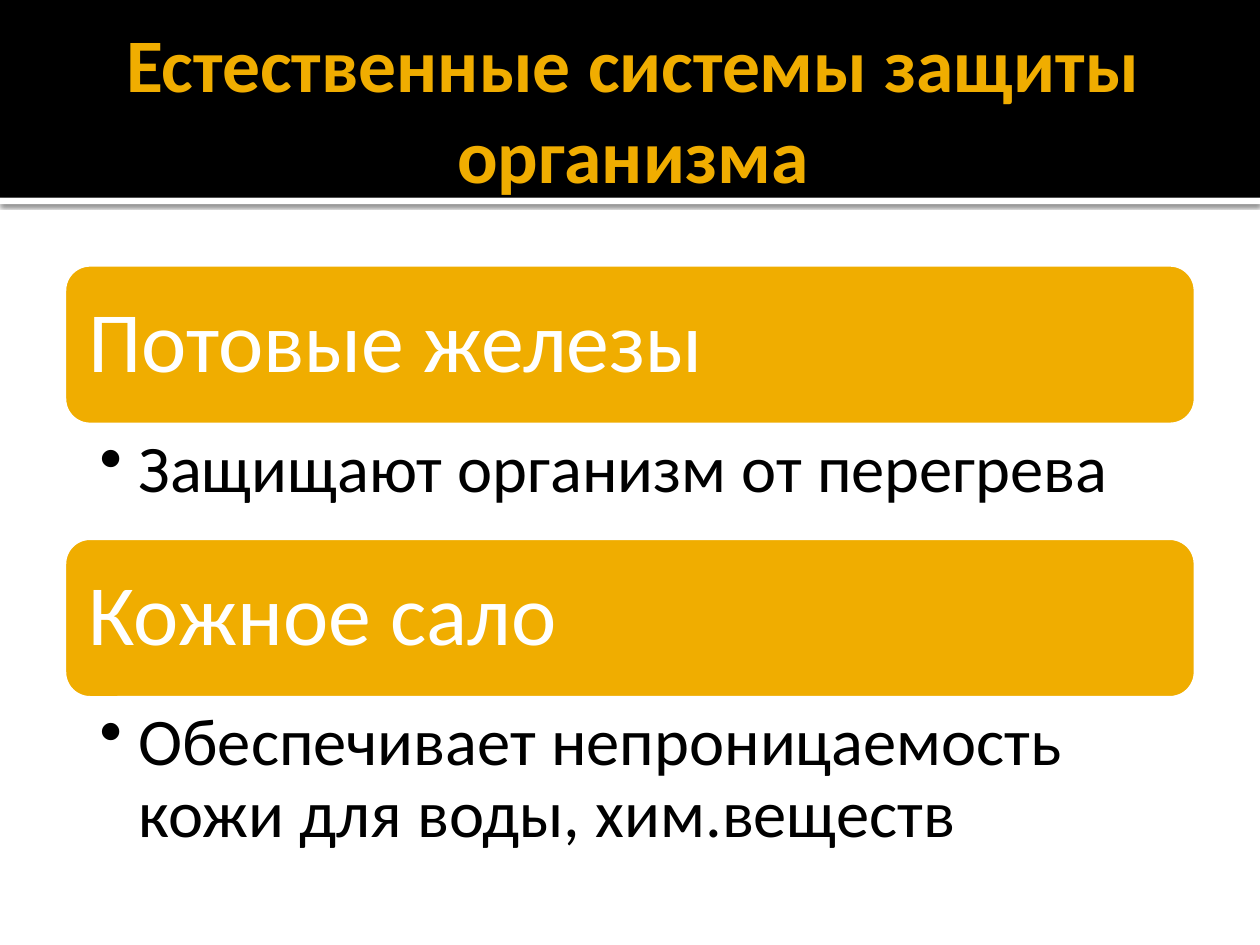
from lxml.etree import SubElement
from pptx import Presentation
from pptx.dml.color import RGBColor
from pptx.enum.shapes import MSO_SHAPE as Form
from pptx.enum.text import MSO_ANCHOR as Anchor, PP_ALIGN as Align
from pptx.oxml.ns import qn
from pptx.util import Inches, Pt

WIDE, HIGH = 10, 7.5


def tint(code):
    return RGBColor.from_string(code)


class Deck:
    font = "Calibri"
    gold, white, black = "F0AD00", "FFFFFF", "000000"

    def __init__(self):
        self.file = Presentation()
        self.file.slide_width = Inches(WIDE)
        self.file.slide_height = Inches(HIGH)
        self.slide = self.file.slides.add_slide(self.file.slide_layouts[6])

    def box(self, x, y, w, h):
        return [Inches(v) for v in (x * WIDE, y * HIGH, w * WIDE, h * HIGH)]

    def shape(self, form, area, fill, line=None):
        item = self.slide.shapes.add_shape(form, *self.box(*area))
        item.shadow.inherit = False
        item.fill.solid()
        item.fill.fore_color.rgb = tint(fill)
        if line:
            item.line.color.rgb = tint(line)
            item.line.width = Pt(3.78)
        else:
            item.line.fill.background()
        return item

    def shade(self, item):
        effects = item.element.spPr.find(qn("a:effectLst"))
        outer = SubElement(effects, qn("a:outerShdw"), blurRad=str(Pt(2.5)),
                           dist=str(Pt(0.8)), dir="5400000", algn="t", rotWithShape="0")
        color = SubElement(outer, qn("a:srgbClr"), val=self.black)
        SubElement(color, qn("a:alpha"), val="60000")

    def label(self, item, text, size, color, pad, anchor=Anchor.MIDDLE,
              align=Align.LEFT, bold=False, space=0.9):
        frame = item.text_frame
        frame.word_wrap = True
        frame.vertical_anchor = anchor
        (frame.margin_left, frame.margin_top,
         frame.margin_right, frame.margin_bottom) = [Inches(v) for v in pad]
        para = frame.paragraphs[0]
        para.alignment = align
        para.line_spacing = space
        run = para.add_run()
        run.text = text
        run.font.name = self.font
        run.font.size = Pt(size)
        run.font.bold = bold
        run.font.color.rgb = tint(color)
        return para

    def title(self, area, text):
        item = self.slide.shapes.add_textbox(*self.box(*area))
        self.label(item, text, 43.2, self.gold, (0.1, 0.05, 0.05, 0.05),
                   align=Align.CENTER, bold=True, space=1.0)

    def head(self, area, text):
        item = self.shape(Form.ROUNDED_RECTANGLE, area, self.gold, self.white)
        self.label(item, text, 49, self.white, (0.14,) * 4)

    def point(self, area, text):
        item = self.slide.shapes.add_textbox(*self.box(*area))
        para = self.label(item, text, 38, self.black, (0.29, 0.07, 0.38, 0.07), Anchor.TOP)
        para.level = 1
        props = para._p.get_or_add_pPr()
        props.set("marL", str(Inches(0.31)))
        props.set("indent", str(-Inches(0.31)))
        SubElement(props, qn("a:buChar"), char="•")


def main():
    deck = Deck()
    band = 1.57 / HIGH
    deck.shade(deck.shape(Form.RECTANGLE, (0, band, 1, 0.05 / HIGH), deck.white))
    deck.shape(Form.RECTANGLE, (0, 0, 1, band), deck.black)
    left, width = 0.05, 0.9
    deck.title((left, 0.17 / HIGH, width, 1.37 / HIGH), "Естественные системы защиты организма")

    top, bar = 2.09 / HIGH, 1.29 / HIGH
    for name, note, tall in (
        ("Потовые железы", "Защищают организм от перегрева", 0.88 / HIGH),
        ("Кожное сало", "Обеспечивает непроницаемость кожи для воды, хим.веществ", 1.3 / HIGH),
    ):
        deck.head((left, top, width, bar), name)
        deck.point((left, top + bar, width, tall), note)
        top += bar + tall
    deck.file.save("out.pptx")


if __name__ == "__main__":
    main()
